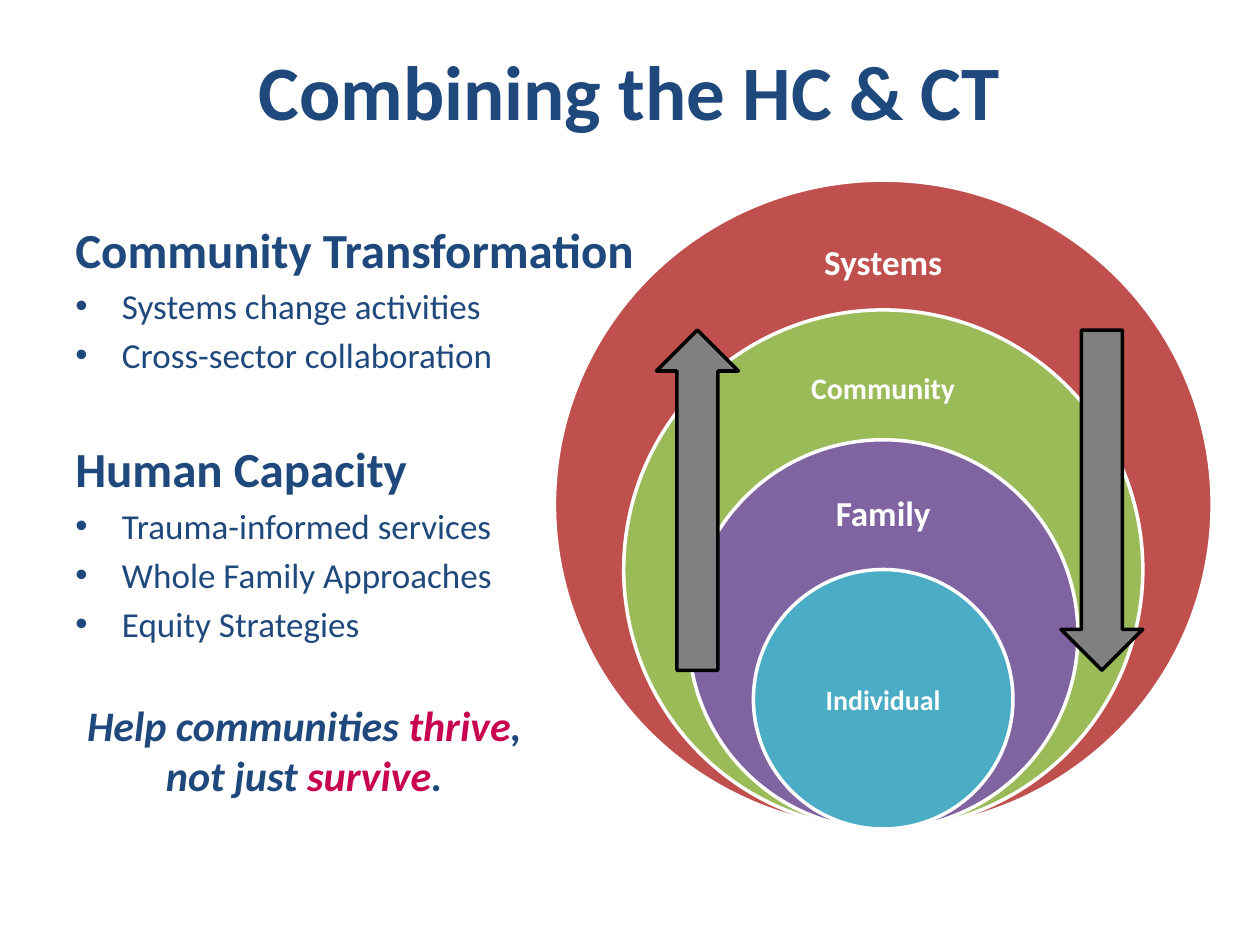
from dataclasses import dataclass

import pptx
import pptx.dml.color
import pptx.enum.shapes
import pptx.enum.text
import pptx.util
from lxml import etree

SHAPE = pptx.enum.shapes.MSO_SHAPE
ALIGN = pptx.enum.text.PP_ALIGN
ANCHOR = pptx.enum.text.MSO_ANCHOR
CELL = 0.1  # grid pitch in inches; the slide is 100 columns by 75 rows


@dataclass(frozen=True)
class Theme:
    font: str = "Calibri"
    navy: str = "1F497D"
    pink: str = "C80452"
    white: str = "FFFFFF"
    black: str = "000000"
    gray: str = "808080"
    red: str = "C0504D"
    green: str = "9BBB59"
    purple: str = "8064A2"
    teal: str = "4BACC6"
    title: int = 44
    head: int = 28
    motto: int = 24
    item: int = 20
    edge: int = 2


@dataclass(frozen=True)
class Box:
    col: float
    row: float
    cols: float
    rows: float

    def place(self) -> list[int]:
        return [span(n) for n in (self.col, self.row, self.cols, self.rows)]


@dataclass(frozen=True)
class Topic:
    head: str
    items: tuple[str, ...]
    box: Box


@dataclass(frozen=True)
class Ring:
    name: str
    fill: str
    size: int
    cols: float
    mid: float  # row of the label's centre


THEME = Theme()
TOPICS = (
    Topic("Community Transformation",
          ("Systems change activities", "Cross-sector collaboration"),
          Box(5, 16.9, 55.4, 17.4)),
    Topic("Human Capacity",
          ("Trauma-informed services", "Whole Family Approaches",
           "Equity Strategies"),
          Box(5, 34.3, 38.3, 20.7)),
)
STEP, AXIS, BASE = 10.3, 70.1, 65.8  # rings grow by STEP and share a base
RINGS = (
    Ring("Systems", THEME.red, 20, 52.2, 20.75),
    Ring("Community", THEME.green, 17, 4 * STEP, 30.8),
    Ring("Family", THEME.purple, 20, 3 * STEP, 40.7),
    Ring("Individual", THEME.teal, 16, 2 * STEP, 55.5),
)
ARROWS = ((52.1, 0), (84.2, 180))
MOTTO = (("Help communities ", THEME.navy), ("thrive", THEME.pink),
         (", not just ", THEME.navy), ("survive", THEME.pink),
         (".", THEME.navy))


def span(cells: float) -> int:
    return pptx.util.Inches(cells * CELL)


def color(code: str) -> pptx.dml.color.RGBColor:
    return pptx.dml.color.RGBColor.from_string(code)


def style(run, size: int, code: str, bold: bool = True) -> None:
    run.font.name = THEME.font
    run.font.size = pptx.util.Pt(size)
    run.font.bold = bold
    run.font.color.rgb = color(code)


def frame(slide, box: Box, anchor=ANCHOR.TOP):
    """Add a wrapping text box and return its text frame."""
    text = slide.shapes.add_textbox(*box.place()).text_frame
    text.word_wrap = True
    text.vertical_anchor = anchor
    return text


def label(slide, box: Box, words: str, size: int, code: str) -> None:
    text = frame(slide, box, ANCHOR.MIDDLE)
    text.text = words
    para = text.paragraphs[0]
    para.alignment = ALIGN.CENTER
    style(para.runs[0], size, code)


def bullet(para) -> None:
    props = para._p.get_or_add_pPr()
    props.set("marL", str(span(3.7)))
    props.set("indent", str(-span(3.7)))
    space = props.nsmap["a"]
    etree.SubElement(props, f"{{{space}}}buFont", typeface="Arial")
    etree.SubElement(props, f"{{{space}}}buChar", char="•")


def topic(slide, part: Topic) -> None:
    text = frame(slide, part.box)
    text.text = part.head
    style(text.paragraphs[0].runs[0], THEME.head, THEME.navy)
    for item in part.items:
        para = text.add_paragraph()
        para.text = item
        bullet(para)
        para.space_before = pptx.util.Pt(THEME.item * 0.2)
        style(para.runs[0], THEME.item, THEME.navy, bold=False)


def solid(slide, kind, box: Box, fill: str, edge: str):
    shape = slide.shapes.add_shape(kind, *box.place())
    shape.shadow.inherit = False
    shape.fill.solid()
    shape.fill.fore_color.rgb = color(fill)
    shape.line.color.rgb = color(edge)
    shape.line.width = pptx.util.Pt(THEME.edge)
    return shape


def ring(slide, part: Ring, rows: float) -> None:
    box = Box(AXIS - part.cols / 2, BASE - rows, part.cols, rows)
    solid(slide, SHAPE.OVAL, box, part.fill, THEME.white)
    label(slide, Box(AXIS - 7.3, part.mid - 3.5, 14.6, 7),
          part.name, part.size, THEME.white)


def motto(slide) -> None:
    para = frame(slide, Box(5, 55, 38.3, 9.1)).paragraphs[0]
    para.alignment = ALIGN.CENTER
    for words, code in MOTTO:
        run = para.add_run()
        run.text = words
        style(run, THEME.motto, code)
        run.font.italic = True


def main() -> None:
    deck = pptx.Presentation()
    deck.slide_width, deck.slide_height = span(100), span(75)
    slide = deck.slides.add_slide(deck.slide_layouts[6])
    label(slide, Box(5, 0.9, 90, 12.5), "Combining the HC & CT",
          THEME.title, THEME.navy)
    for part in TOPICS:
        topic(slide, part)
    for rank, part in enumerate(RINGS):
        ring(slide, part, (5 - rank) * STEP)
    for col, turn in ARROWS:
        arrow = solid(slide, SHAPE.UP_ARROW, Box(col, 26.2, 6.5, 27),
                      THEME.gray, THEME.black)
        arrow.rotation = turn
    motto(slide)
    deck.save("out.pptx")


if __name__ == "__main__":
    main()
